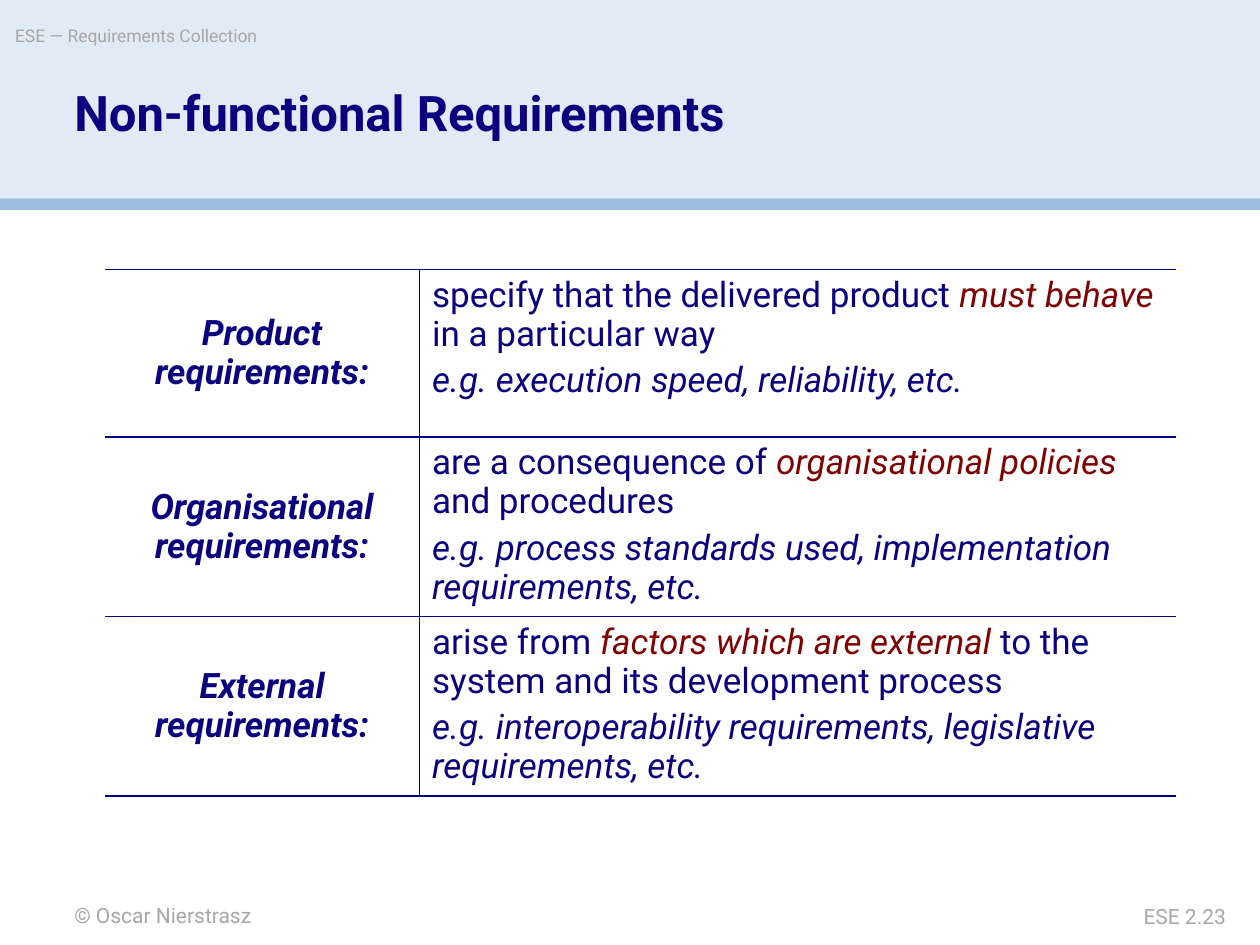
import dataclasses

import pptx
import pptx.dml.color
import pptx.enum.shapes
import pptx.enum.text
import pptx.oxml.ns
import pptx.util
from lxml import etree

HEADER = "ESE — Requirements Collection"
TITLE = "Non-functional Requirements"
AUTHOR = "© Oscar Nierstrasz"
PAGE = "ESE 2.23"
REQUIREMENTS = [
    ("Product requirements:",
     ("specify that the delivered product ", "must behave", " in a particular way"),
     "e.g. execution speed, reliability, etc."),
    ("Organisational requirements:",
     ("are a consequence of ", "organisational policies", " and procedures"),
     "e.g. process standards used, implementation requirements, etc."),
    ("External requirements:",
     ("arise from ", "factors which are external",
      " to the system and its development process"),
     "e.g. interoperability requirements, legislative requirements, etc."),
]


@dataclasses.dataclass(frozen=True)
class Theme:
    font: str = "Roboto"
    ink: str = "0A017F"
    accent: str = "7F0101"
    muted: str = "A7A7A7"
    rule: str = "00027F"
    banner: str = "E1EBF5"
    stripe: str = "9CBDDE"
    title_size: int = 28
    body_size: int = 20
    footer_size: int = 12
    header_size: int = 10
    rule_width: int = 1


THEME = Theme()
WIDTH, HEIGHT = 10, 7.5
MARGIN = 0.59
TABLE_LEFT, TABLE_TOP = 0.83, 2.14
COLUMN_WIDTHS = (2.5, 6)
ROW_HEIGHT = 1.33
BANNER_HEIGHT = 0.21 * HEIGHT
STRIPE_HEIGHT = 0.09
ALIGN = pptx.enum.text.PP_ALIGN


def rgb(color):
    return pptx.dml.color.RGBColor.from_string(color)


def box(*lengths):
    return [pptx.util.Inches(length) for length in lengths]


def write(paragraph, text, *, size=THEME.body_size, color=THEME.ink, bold=False,
          italic=False, align=ALIGN.LEFT, line=1.0, before=0):
    paragraph.alignment = align
    paragraph.line_spacing = line
    paragraph.space_before = pptx.util.Pt(before)
    run = paragraph.add_run()
    run.text = text
    run.font.name = THEME.font
    run.font.size = pptx.util.Pt(size)
    run.font.color.rgb = rgb(color)
    run.font.bold = bold
    run.font.italic = italic


def add_label(slide, position, text, wrap=True, **style):
    frame = slide.shapes.add_textbox(*box(*position)).text_frame
    frame.word_wrap = wrap
    frame.margin_left = frame.margin_right = frame.margin_top = frame.margin_bottom = 0
    write(frame.paragraphs[0], text, **style)


def add_band(slide, top, height, color):
    shape = slide.shapes.add_shape(
        pptx.enum.shapes.MSO_SHAPE.RECTANGLE, *box(0, top, WIDTH, height))
    shape.shadow.inherit = False
    shape.fill.solid()
    shape.fill.fore_color.rgb = rgb(color)
    shape.line.fill.background()


def set_borders(cell, sides):
    cell.fill.background()
    properties = cell._tc.get_or_add_tcPr()
    qualified = pptx.oxml.ns.qn
    for index, side in enumerate("LRTB"):
        border = etree.Element(qualified(f"a:ln{side}"))
        if side in sides:
            border.set("w", str(pptx.util.Pt(THEME.rule_width)))
            fill = etree.SubElement(border, qualified("a:solidFill"))
            etree.SubElement(fill, qualified("a:srgbClr"), val=THEME.rule)
        else:
            etree.SubElement(border, qualified("a:noFill"))
        properties.insert(index, border)


def add_requirements(slide):
    table = slide.shapes.add_table(
        len(REQUIREMENTS), len(COLUMN_WIDTHS),
        *box(TABLE_LEFT, TABLE_TOP, sum(COLUMN_WIDTHS),
             ROW_HEIGHT * len(REQUIREMENTS))).table
    table.first_row = table.horz_banding = False
    for column, width in zip(table.columns, COLUMN_WIDTHS):
        column.width = pptx.util.Inches(width)
    for row, (name, description, example) in zip(table.rows, REQUIREMENTS):
        row.height = pptx.util.Inches(ROW_HEIGHT)
        name_cell, detail_cell = row.cells
        set_borders(name_cell, "RTB")
        set_borders(detail_cell, "LTB")
        name_cell.vertical_anchor = pptx.enum.text.MSO_ANCHOR.MIDDLE
        write(name_cell.text_frame.paragraphs[0], name, bold=True, italic=True,
              align=ALIGN.CENTER, line=0.95)
        details = detail_cell.text_frame
        colors = (THEME.ink, THEME.accent, THEME.ink)
        for text, color in zip(description, colors):
            write(details.paragraphs[0], text, color=color,
                  italic=color == THEME.accent, line=0.95)
        write(details.add_paragraph(), example, italic=True, line=0.95,
              before=0.2 * THEME.body_size)


def main():
    presentation = pptx.Presentation()
    presentation.slide_width, presentation.slide_height = box(WIDTH, HEIGHT)
    slide = presentation.slides.add_slide(presentation.slide_layouts[6])
    add_band(slide, 0, BANNER_HEIGHT, THEME.banner)
    add_band(slide, BANNER_HEIGHT, STRIPE_HEIGHT, THEME.stripe)
    footer = dict(size=THEME.footer_size, color=THEME.muted)
    add_label(slide, (MARGIN, 7.16, 4.17, 0.2), AUTHOR, **footer)
    add_label(slide, (0.12, 0.2, 5.9, 0.28), HEADER, wrap=False,
              size=THEME.header_size, color=THEME.muted)
    add_label(slide, (8.25, 7.17, 1.48, 0.2), PAGE, align=ALIGN.RIGHT, **footer)
    add_label(slide, (MARGIN, 0.71, 7.24, 0.89), TITLE, size=THEME.title_size,
              bold=True, line=0.9)
    add_requirements(slide)
    presentation.save("out.pptx")


if __name__ == "__main__":
    main()
